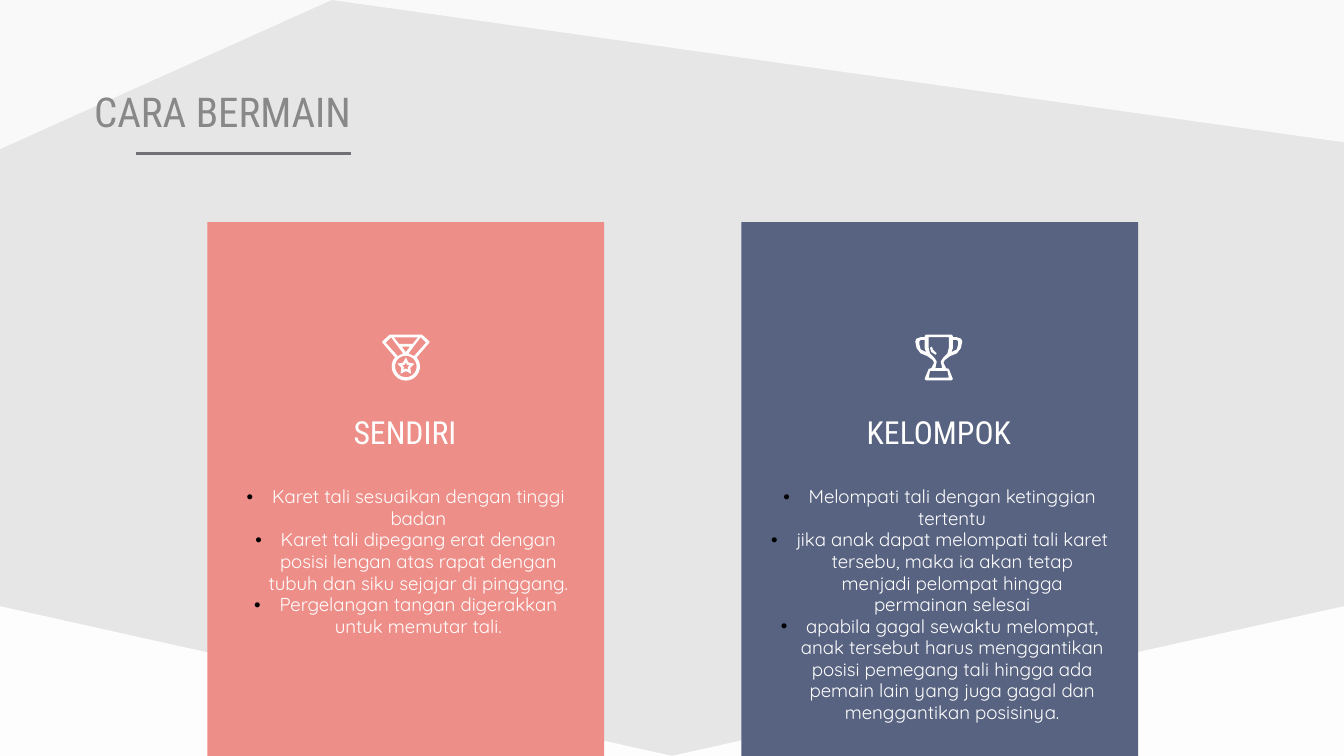
from math import cos, radians, sin

from lxml import etree
from pptx import Presentation
from pptx.dml.color import RGBColor
from pptx.enum.shapes import MSO_CONNECTOR, MSO_SHAPE
from pptx.enum.text import MSO_ANCHOR, PP_ALIGN
from pptx.oxml.ns import qn
from pptx.util import Cm, Pt

RECT, STRAIGHT = MSO_SHAPE.RECTANGLE, MSO_CONNECTOR.STRAIGHT
LEFT, CENTER, TOP = PP_ALIGN.LEFT, PP_ALIGN.CENTER, MSO_ANCHOR.TOP

COLORS = {
    "backdrop": "E6E6E6", "white": "FFFFFF", "black": "000000",
    "coral": "EE8E88", "navy": "586381", "title": "888888", "rule": "717076",
}
W, H = 25.4, 14.29
ICON_UNIT = 0.0254  # cm per icon grid step


def rgb(name):
    return RGBColor.from_string(COLORS[name])


def add_xml(parent, tag, **attrs):
    return etree.SubElement(parent, qn(tag), attrs)


class SlideBuilder:
    title = {"name": "Roboto Condensed", "size": Pt(22)}
    heading = {"name": "Roboto Condensed", "size": Pt(17)}
    body = {"name": "Quicksand", "size": Pt(10)}

    def __init__(self, slide):
        self.s = slide

    def paint(self, sp, color, opacity=100):
        sp.shadow.inherit = False
        sp.fill.solid()
        sp.fill.fore_color.rgb = rgb(color)
        sp.line.fill.background()
        if opacity < 100:
            clr = sp.fill._xPr.find(qn("a:solidFill"))[0]
            add_xml(clr, "a:alpha", val=str(opacity * 1000))

    def rect(self, x, y, w, h, color):
        sp = self.s.shapes.add_shape(RECT, Cm(x), Cm(y), Cm(w), Cm(h))
        self.paint(sp, color)

    def freeform(self, contours, color, opacity=100, unit=1):
        contours = [[(Cm(x * unit), Cm(y * unit)) for x, y in c] for c in contours]
        fb = self.s.shapes.build_freeform(*contours[0][0])
        fb.add_line_segments(contours[0][1:], close=True)
        for contour in contours[1:]:
            fb.move_to(*contour[0])
            fb.add_line_segments(contour[1:], close=True)
        self.paint(fb.convert_to_shape(), color, opacity)

    def line(self, x1, y1, x2, y2, color, width):
        c = self.s.shapes.add_connector(STRAIGHT, Cm(x1), Cm(y1), Cm(x2), Cm(y2))
        c.line.color.rgb = rgb(color)
        c.line.width = Pt(width)
        add_xml(c._element.spPr, "a:effectLst")

    def text(self, x, y, w, h, lines, style, color, align=CENTER, bullets=False):
        tf = self.s.shapes.add_textbox(Cm(x), Cm(y), Cm(w), Cm(h)).text_frame
        frame = {"word_wrap": True, "vertical_anchor": TOP, "margin_left": 0,
                 "margin_right": 0, "margin_top": 0, "margin_bottom": 0}
        for key, value in frame.items():
            setattr(tf, key, value)
        for i, line in enumerate(lines):
            p = tf.paragraphs[0] if i == 0 else tf.add_paragraph()
            p.alignment = align
            if bullets:
                self.bullet(p)
            r = p.add_run()
            r.text = line
            for key, value in style.items():
                setattr(r.font, key, value)
            r.font.color.rgb = rgb(color)

    def bullet(self, p):
        p.line_spacing = 0.96
        pPr = p._p.get_or_add_pPr()
        pPr.set("marL", str(Cm(0.48)))
        pPr.set("indent", str(-Cm(0.48)))
        add_xml(add_xml(pPr, "a:buClr"), "a:srgbClr", val=COLORS["black"])
        add_xml(pPr, "a:buFont", typeface="Arial")
        add_xml(pPr, "a:buChar", char="•")


def arc(cx, cy, r, start, end, step=10):
    angles = [radians(a) for a in range(start, end, step)]
    return [(cx + r * cos(a), cy + r * sin(a)) for a in angles]


def star(cx, cy, r):
    spokes = [(radians(36 * i - 90), r if i % 2 == 0 else r * 0.52) for i in range(10)]
    return [(cx + d * cos(a), cy + d * sin(a)) for a, d in spokes]


def mirror(points, axis):
    return [(2 * axis - x, y) for x, y in reversed(points)]


def medal_icon():
    cx, cy = 302, 272.7
    strap = [(313, 251), (317, 255), (308, 265), (304, 263)]
    side = [(310, 266), (319.5, 255), (319.5, 254), (314, 249)]
    return [
        side + mirror(side, cx) + arc(cx, cy, 10.5, 220, -40, -10),  # outline
        [(311, 251), (307, 256), (297, 256), (293, 251)],
        [(305, 258), (302, 262), (299, 258)],
        strap, mirror(strap, cx),
        arc(cx, cy, 8, 0, 360),
        star(cx, cy, 6.7), star(cx, cy, 3),
    ]


def trophy_icon():
    axis = 698.5
    outline = [(708, 249), (709, 250), (709, 251), (712, 251), (715, 252), (716, 254),
               (715, 259), (712, 263), (707, 265), (703, 268), (702, 270), (704, 274),
               (706, 274.5), (709, 282), (708, 283)]
    cup = [(706, 251), (706, 259), (705, 263), (702, 266), (700, 269), (701, 274)]
    base = [(705, 276), (706, 281)]
    handle = [(709, 253), (712, 253), (713, 254), (713, 256), (712, 260), (708, 262),
              (709, 259)]
    glare = [(693, 258), (692, 259), (693, 262), (696, 264), (697, 263), (694, 260),
             (694, 259)]
    halves = [half + mirror(half, axis) for half in (outline, cup, base)]
    return halves + [handle, mirror(handle, axis), glare]


CARDS = [
    (3.92, "coral", "SENDIRI", medal_icon(), [
        "Karet tali sesuaikan dengan tinggi badan",
        "Karet tali dipegang erat dengan posisi lengan atas rapat dengan tubuh dan "
        "siku sejajar di pinggang.",
        "Pergelangan tangan digerakkan untuk memutar tali."]),
    (14.01, "navy", "KELOMPOK", trophy_icon(), [
        "Melompati tali dengan ketinggian tertentu",
        "jika anak dapat melompati tali karet tersebu, maka ia akan tetap menjadi "
        "pelompat hingga permainan selesai",
        "apabila gagal sewaktu melompat, anak tersebut harus menggantikan posisi "
        "pemegang tali hingga ada pemain lain yang juga gagal dan menggantikan "
        "posisinya."]),
]


def main():
    prs = Presentation()
    prs.slide_width, prs.slide_height = Cm(W), Cm(H)
    b = SlideBuilder(prs.slides.add_slide(prs.slide_layouts[6]))

    # Grey backdrop with translucent corners; the lower ones are doubled
    b.rect(0, 0, W, H, "backdrop")
    upper = [[(0, 0), (0, 2.82), (6.27, 0)], [(W, 0), (6.27, 0), (W, 2.69)]]
    lower = [[(x, 11.46), (x, H), (W / 2, H)] for x in (0, W)]
    for corner in upper + lower * 2:
        b.freeform([corner], "white", opacity=78)

    # Title and underline
    b.text(1.78, 1.63, 20.04, 0.79, ["CARA BERMAIN"], b.title, "title", LEFT)
    b.line(2.57, 2.9, 6.63, 2.9, "rule", 2)

    # Cards
    for x, color, name, icon, steps in CARDS:
        b.rect(x, 4.2, 7.5, H - 4.2, color)
        b.freeform(icon, "white", unit=ICON_UNIT)
        b.text(x - 1.98, 7.8, 11.43, 1.37, [name], b.heading, "white")
        b.text(x + 0.53, 9.2, 6.43, 4.2, steps, b.body, "white", bullets=True)

    prs.save("out.pptx")


if __name__ == "__main__":
    main()
